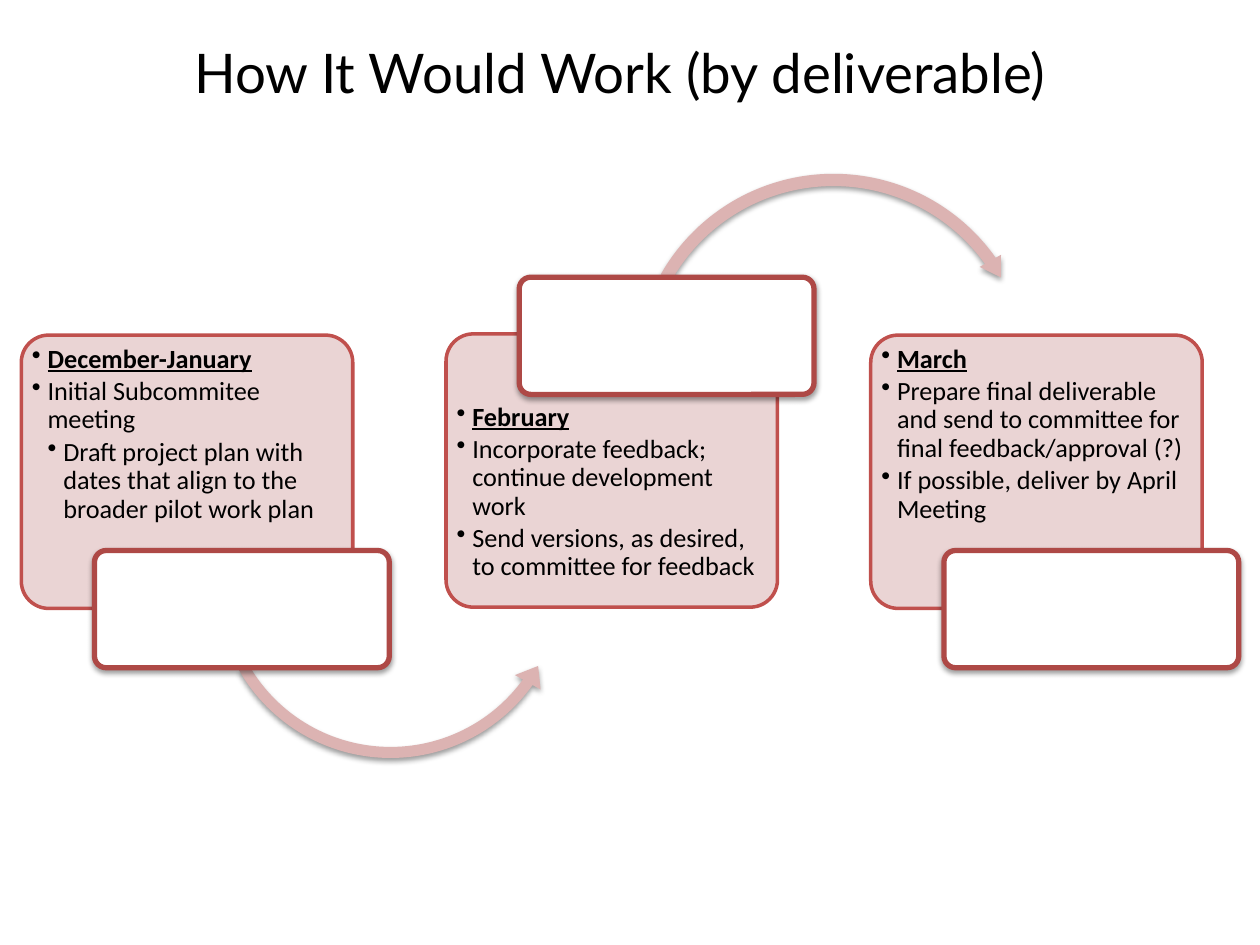
from dataclasses import dataclass

from lxml import etree
from pptx import Presentation
from pptx.dml.color import RGBColor
from pptx.enum.shapes import MSO_SHAPE
from pptx.enum.text import MSO_ANCHOR, PP_ALIGN
from pptx.oxml.ns import qn
from pptx.util import Pt

ROUND = MSO_SHAPE.ROUNDED_RECTANGLE
LEFT_ARC = MSO_SHAPE.LEFT_CIRCULAR_ARROW
RIGHT_ARC = MSO_SHAPE.CIRCULAR_ARROW
TOP = MSO_ANCHOR.TOP
CENTER = PP_ALIGN.CENTER


@dataclass(frozen=True)
class Theme:
    ink: str = "000000"
    panel: str = "E8D0D0"
    edge: str = "C0504D"
    label: str = "FFFFFF"
    rim: str = "AE4946"
    arrow: str = "DCB3B2"
    head_font: str = "Lato"
    body_font: str = "Calibri"
    head_size: float = 31.2
    body_size: float = 15


THEME = Theme()
TITLE = "How It Would Work (by deliverable)"
STEPS = [
    {
        "month": "December-January",
        "items": [
            (1, "Initial Subcommitee meeting"),
            (2, "Draft project plan with dates that align to the broader pilot work plan"),
        ],
        "top": 191.5, "text": 195.1, "label": 314.6,
        "arc": (LEFT_ARC, 118.1, 228.2, 210.2, (0.03, 3.93, 21.5, 90.06, 0.04)),
    },
    {
        "month": "February",
        "items": [
            (1, "Incorporate feedback; continue development work"),
            (1, "Send versions, as desired, to committee for feedback"),
        ],
        "top": 190.8, "text": 228.2, "label": 158.4,
        "arc": (RIGHT_ARC, 359.3, 95.8, 234, (0.03, 3.5, 194.75, 125.76, 0.03)),
    },
    {
        "month": "March",
        "items": [
            (1, "Prepare final deliverable and send to committee for final feedback/approval (?)"),
            (1, "If possible, deliver by April Meeting"),
        ],
        "top": 191.5, "text": 195.1, "label": 314.6,
        "arc": None,
    },
]
START, PITCH = 12.2, 242.7
PANEL = (189.4, 156.2)
LABEL = (168.5, 67)
TEXT = (182.2, 115.9)
LABEL_SHIFT, TEXT_SHIFT = 41.8, 3.6
INDENT = 9


def add_shape(slide, kind, box, fill, line=None, width=0, adjust=(), alpha=None, shade=False):
    shape = slide.shapes.add_shape(kind, *map(Pt, box))
    for i, value in enumerate(adjust):
        shape.adjustments[i] = value
    shape.fill.solid()
    shape.fill.fore_color.rgb = RGBColor.from_string(fill)
    if line:
        shape.line.color.rgb = RGBColor.from_string(line)
        shape.line.width = Pt(width)
    else:
        shape.line.fill.background()
    shape.shadow.inherit = False
    props = shape._element.spPr
    if alpha:
        color = props.find(qn("a:solidFill")).find(qn("a:srgbClr"))
        etree.SubElement(color, qn("a:alpha"), val=str(alpha * 1000))
    if shade:
        outer = etree.SubElement(
            props.find(qn("a:effectLst")), qn("a:outerShdw"),
            blurRad=str(Pt(3.1)), dist=str(Pt(1.6)), dir="5400000", rotWithShape="0",
        )
        color = etree.SubElement(outer, qn("a:srgbClr"), val=THEME.ink)
        etree.SubElement(color, qn("a:alpha"), val="38000")


def add_frame(slide, box, inset):
    frame = slide.shapes.add_textbox(*map(Pt, box)).text_frame
    frame.word_wrap = True
    frame.vertical_anchor = TOP
    frame.margin_left = frame.margin_right = Pt(inset[0])
    frame.margin_top = frame.margin_bottom = Pt(inset[1])
    return frame


def set_font(para, name, size):
    para.font.name = name
    para.font.size = Pt(size)
    para.font.color.rgb = RGBColor.from_string(THEME.ink)


def add_list(slide, box, step):
    frame = add_frame(slide, box, (2.4, 2.4))
    for i, (level, text) in enumerate([(1, step["month"]), *step["items"]]):
        para = frame.add_paragraph() if i else frame.paragraphs[0]
        para.text = text
        para.level = level
        para.line_spacing = 0.9
        para.space_after = Pt(2.25)
        props = para._p.get_or_add_pPr()
        props.set("marL", str(Pt(INDENT * level)))
        props.set("indent", str(-Pt(INDENT)))
        etree.SubElement(props, qn("a:buChar"), char="•")
        set_font(para, THEME.body_font, THEME.body_size)
        para.font.bold = para.font.underline = i == 0


def add_step(slide, i, step):
    left = START + i * PITCH
    add_shape(slide, ROUND, (left, step["top"], *PANEL), THEME.panel,
              THEME.edge, 2, (0.1,), alpha=90)
    add_list(slide, (left + TEXT_SHIFT, step["text"], *TEXT), step)
    if step["arc"]:
        kind, x, y, size, adjust = step["arc"]
        add_shape(slide, kind, (x, y, size, size), THEME.arrow, adjust=adjust, shade=True)
    add_shape(slide, ROUND, (left + LABEL_SHIFT, step["label"], *LABEL), THEME.label,
              THEME.rim, 3, (0.1,), shade=True)


def main():
    deck = Presentation()
    deck.slide_width, deck.slide_height = Pt(720), Pt(540)
    slide = deck.slides.add_slide(deck.slide_layouts[6])
    for i, step in enumerate(STEPS):
        add_step(slide, i, step)
    para = add_frame(slide, (START, 18, 684, 90), (7.2, 3.6)).paragraphs[0]
    para.text = TITLE
    para.alignment = CENTER
    para.line_spacing = Pt(38)
    set_font(para, THEME.head_font, THEME.head_size)
    deck.save("out.pptx")


if __name__ == "__main__":
    main()
